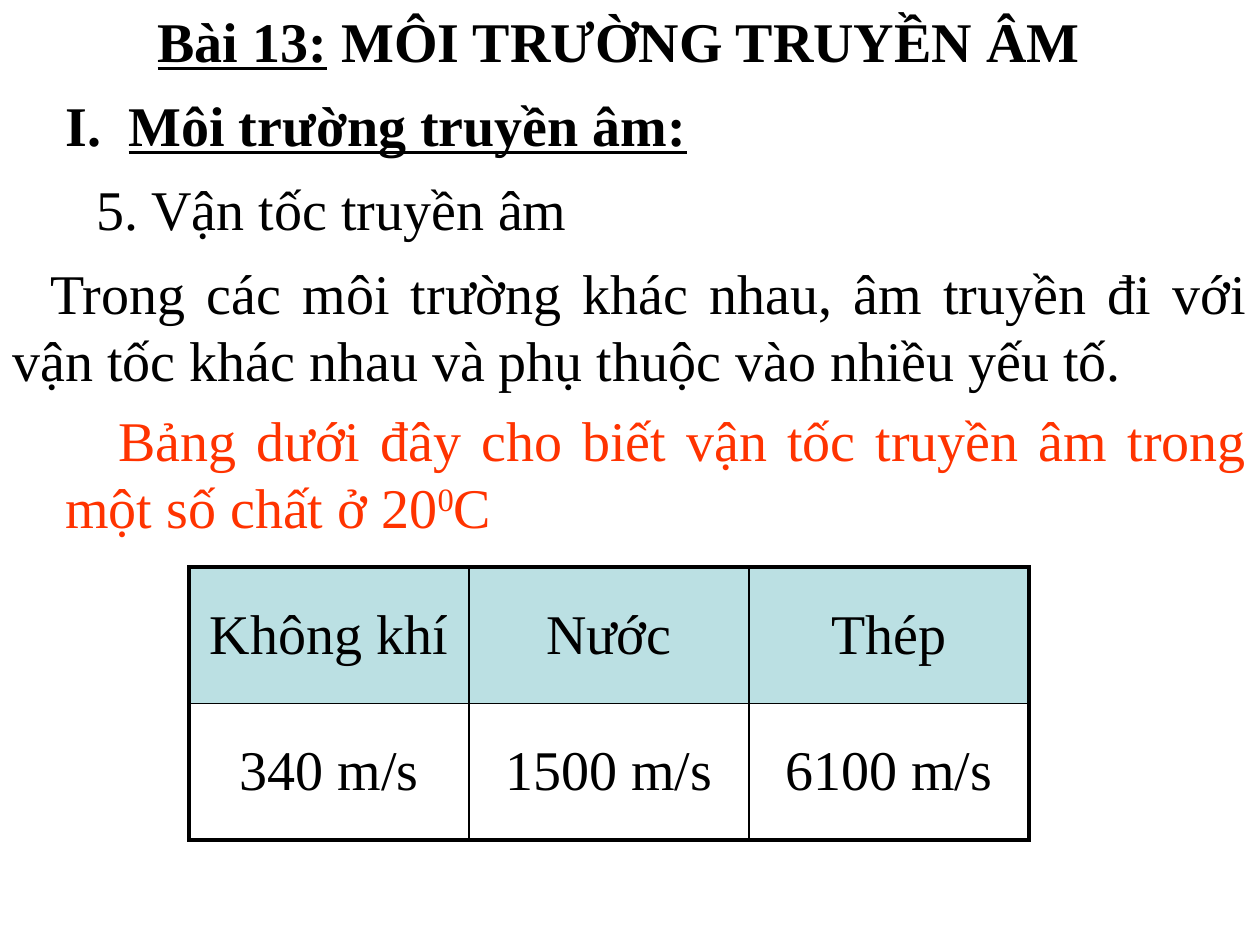
from pptx import Presentation
from pptx.dml.color import RGBColor as RGB
from pptx.enum.text import MSO_ANCHOR as ANCHOR, MSO_AUTO_SIZE as AUTO, PP_ALIGN as AL
from pptx.oxml import parse_xml
from pptx.oxml.ns import nsdecls
from pptx.util import Pt

SCALE = 914400 / 126  # EMU per px
COLORS = {"text": "000000", "accent": "FF3300", "header": "BBE0E3"}
FONT = {"name": "Times New Roman", "size": Pt(32), "bold": False}
STRONG = {"bold": True, "underline": True}
THICK, THIN = 2.25, 1


def px(n):
    return round(n * SCALE)


def set_attrs(obj, values):
    for name, value in values.items():
        setattr(obj, name, value)


def place(sp, *box):
    set_attrs(sp, dict(zip(("left", "top", "width", "height"), map(px, box))))


def write(tf, runs, align=AL.LEFT, color="text", margin=0, indent=0, bullet=None):
    """Fill the first paragraph with (text, font values, baseline) runs."""
    p = tf.paragraphs[0]
    pPr = p._p.get_or_add_pPr()
    pPr.set("marL", str(px(margin)))
    pPr.set("indent", str(px(indent)))
    mark = f'<a:buAutoNum {nsdecls("a")} type="{bullet}"/>' if bullet else f'<a:buNone {nsdecls("a")}/>'
    pPr.append(parse_xml(mark))
    set_attrs(p, {"alignment": align, "space_before": Pt(0)})
    for text, values, baseline in runs:
        r = p.add_run()
        r.text = text
        set_attrs(r.font, {**FONT, **values})
        r.font.color.rgb = RGB.from_string(COLORS[color])
        if baseline:
            r._r.get_or_add_rPr().set("baseline", str(baseline * 1000))


def fill_text(sp, box, runs, **layout):
    place(sp, *box)
    tf = sp.text_frame
    set_attrs(tf, {"word_wrap": True, "auto_size": AUTO.NONE, "vertical_anchor": ANCHOR.TOP})
    write(tf, runs, **layout)


def add_text(s, box, runs, **layout):
    fill_text(s.shapes.add_textbox(0, 0, 0, 0), box, runs, **layout)


def set_borders(cell, widths):
    tcPr = cell._tc.get_or_add_tcPr()
    for side, width in zip("LRTB", widths):
        tcPr.append(parse_xml(
            f'<a:ln{side} {nsdecls("a")} w="{Pt(width)}"><a:solidFill>'
            f'<a:srgbClr val="{COLORS["text"]}"/></a:solidFill></a:ln{side}>'))


def add_speed_table(s, box, rows):
    last_row, last_col = len(rows) - 1, len(rows[0]) - 1
    table = s.shapes.add_table(last_row + 1, last_col + 1, *map(px, box)).table
    set_attrs(table, {"first_row": False, "horz_banding": False})
    for i, row in enumerate(rows):
        for j, text in enumerate(row):
            cell = table.cell(i, j)
            # Thick outer frame, thin inner lines
            outer = (j == 0, j == last_col, i == 0, i == last_row)
            set_borders(cell, [THICK if edge else THIN for edge in outer])
            if i == 0:
                cell.fill.solid()
                cell.fill.fore_color.rgb = RGB.from_string(COLORS["header"])
            else:
                cell.fill.background()
            cell.vertical_anchor = ANCHOR.MIDDLE
            write(cell.text_frame, [(text, {}, 0)], align=AL.CENTER)


def main():
    prs = Presentation()
    set_attrs(prs, {"slide_width": px(1260), "slide_height": px(945)})
    s = prs.slides.add_slide(prs.slide_layouts[1])
    title, body = s.placeholders

    # Lesson title and section heading
    fill_text(title, (73, 0, 1092, 79),
              [("Bài 13:", STRONG, 0), (" MÔI TRƯỜNG TRUYỀN ÂM", {"bold": True}, 0)],
              align=AL.CENTER)
    fill_text(body, (53, 84, 693, 79), [("Môi trường truyền âm:", STRONG, 0)],
              margin=63, indent=-63, bullet="romanUcPeriod")

    # Subheading and explanation
    add_text(s, (84, 168, 577, 79), [("5. Vận tốc truyền âm", {}, 0)])
    add_text(s, (0, 252, 1260, 147),
             [("Trong các môi trường khác nhau, âm truyền đi với vận tốc "
               "khác nhau và phụ thuộc vào nhiều yếu tố.", {}, 0)],
             align=AL.JUSTIFY, indent=38)
    add_text(s, (53, 399, 1207, 147),
             [("Bảng dưới đây cho biết vận tốc truyền âm trong một số chất ở 20", {}, 0),
              ("0", {}, 30), ("C", {}, 0)],
             align=AL.JUSTIFY, color="accent", indent=53)

    # Speed of sound by medium
    add_speed_table(s, (189, 567, 840, 273),
                    [("Không khí", "Nước", "Thép"),
                     ("340 m/s", "1500 m/s", "6100 m/s")])
    prs.save("out.pptx")


if __name__ == "__main__":
    main()
